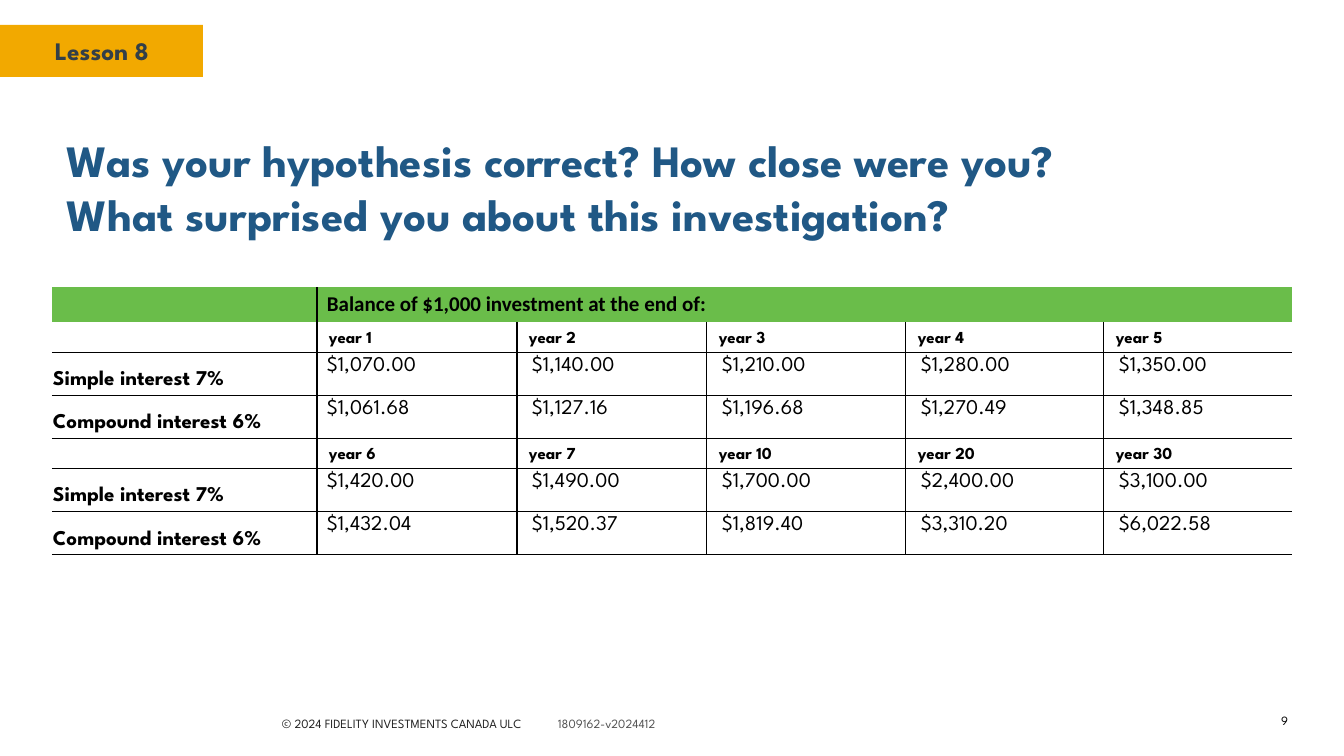
from dataclasses import dataclass

from lxml.etree import SubElement
from pptx import Presentation
from pptx.dml.color import RGBColor as RGB
from pptx.enum.shapes import MSO_SHAPE as SHAPE
from pptx.enum.text import MSO_ANCHOR as ANCHOR, PP_ALIGN as ALIGN
from pptx.oxml.ns import qn
from pptx.util import Emu, Pt


@dataclass(frozen=True)
class Theme:
    """Colours, fonts and type sizes."""
    font: str = "League Spartan"
    head_font: str = "Calibri"
    amber: str = "F2A900"
    slate: str = "333F48"
    blue: str = "205885"
    green: str = "6ABD4A"
    black: str = "000000"
    ink: str = "222222"
    grey: str = "545454"
    title: int = 32
    tag: int = 18
    body: int = 15
    year: int = 12
    small: int = 9


T = Theme()
PLAIN_TABLE = "{2D5ABB26-0587-4C30-8999-92F81FD0307C}"
COLS = (265, 200, 190, 199, 198, 188)
HEAD_H, YEAR_H, VALUE_H = 35, 30, 43
VALUE_SPACING = 0.76
HEADING = "Balance of $1,000 investment at the end of:"
BLOCKS = (
    (("", "year 1", "year 2", "year 3", "year 4", "year 5"),
     ("Simple interest 7%", "$1,070.00", "$1,140.00", "$1,210.00", "$1,280.00", "$1,350.00"),
     ("Compound interest 6%", "$1,061.68", "$1,127.16", "$1,196.68", "$1,270.49", "$1,348.85")),
    (("", "year 6", "year 7", "year 10", "year 20", "year 30"),
     ("Simple interest 7%", "$1,420.00", "$1,490.00", "$1,700.00", "$2,400.00", "$3,100.00"),
     ("Compound interest 6%", "$1,432.04", "$1,520.37", "$1,819.40", "$3,310.20", "$6,022.58")),
)


def px(n):
    """Turn pixels into EMU."""
    return Emu(round(n * 914400 / 100.8))


def add_run(p, text, size, color, bold=False, font=T.font):
    """Add one styled run to a paragraph."""
    r = p.add_run()
    r.text = text
    r.font.name, r.font.size, r.font.bold = font, Pt(size), bold
    r.font.color.rgb = RGB.from_string(color)


def add_box(s, x, y, w, h):
    """Add a wrapping text box and return its text frame."""
    tf = s.shapes.add_textbox(px(x), px(y), px(w), px(h)).text_frame
    tf.word_wrap = True
    return tf


def add_tag(s, x, y, w, h):
    """Draw the lesson tag."""
    sp = s.shapes.add_shape(SHAPE.RECTANGLE, px(x), px(y), px(w), px(h))
    sp.shadow.inherit = False
    sp.fill.solid()
    sp.fill.fore_color.rgb = RGB.from_string(T.amber)
    sp.line.fill.background()
    tf = add_box(s, x + 45, y + 5, w - 71, h - 12)
    add_run(tf.paragraphs[0], "Lesson 8", T.tag, T.slate, True)


def add_title(s, x, y, w, h):
    """Place the two-line question."""
    p = add_box(s, x, y, w, h).paragraphs[0]
    add_run(p, "Was your hypothesis correct? How close were you?", T.title, T.blue, True)
    p.add_line_break()
    add_run(p, "What surprised you about this investigation?", T.title, T.blue, True)


def set_borders(cell, sides):
    """Rule the named sides of a cell and clear the others."""
    tc_pr = cell._tc.get_or_add_tcPr()
    for side in "LRTB":
        ln = SubElement(tc_pr, qn(f"a:ln{side}"), w=str(Pt(1)))
        if side in sides:
            fill = SubElement(ln, qn("a:solidFill"))
            SubElement(fill, qn("a:srgbClr"), val=T.black)
        else:
            SubElement(ln, qn("a:noFill"))


def fill_cell(cell, text, size, insets, anchor, bold=True, font=T.font):
    """Set the insets, anchor and text of a cell."""
    cell.margin_left, cell.margin_top, cell.margin_right, cell.margin_bottom = map(px, insets)
    cell.vertical_anchor = anchor
    p = cell.text_frame.paragraphs[0]
    if text:
        add_run(p, text, size, T.black, bold, font)
    else:
        SubElement(p._p, qn("a:endParaRPr"), sz=str(size * 100))


def add_header(tbl):
    """Fill the green heading row."""
    tbl.cell(0, 1).merge(tbl.cell(0, len(COLS) - 1))
    for i, text in enumerate(("", HEADING)):
        cell = tbl.cell(0, i)
        set_borders(cell, "L" if i else "R")
        fill_cell(cell, text, T.body, (10, 5, 10, 5), ANCHOR.TOP, font=T.head_font)
        cell.fill.solid()
        cell.fill.fore_color.rgb = RGB.from_string(T.green)


def add_balances(s, x, y):
    """Build the table of balances."""
    rows = [row for block in BLOCKS for row in block]
    heights = [HEAD_H] + [YEAR_H, VALUE_H, VALUE_H] * len(BLOCKS)
    tbl = s.shapes.add_table(len(heights), len(COLS), px(x), px(y),
                             px(sum(COLS)), px(sum(heights))).table
    tbl._tbl.tblPr.find(qn("a:tableStyleId")).text = PLAIN_TABLE
    tbl.first_row = tbl.horz_banding = False
    for col, w in zip(tbl.columns, COLS):
        col.width = px(w)
    for row, h in zip(tbl.rows, heights):
        row.height = px(h)
    add_header(tbl)
    for i, row in enumerate(rows, 1):
        is_year = not row[0]
        for j, text in enumerate(row):
            cell = tbl.cell(i, j)
            sides = "B" + "T" * (i > 1) + "L" * (j > 0) + "R" * (j < len(COLS) - 1)
            set_borders(cell, sides)
            is_value = j > 0 and not is_year
            if is_value:
                insets = (10 if j == 1 else 15, 3, 1, 21)
                cell.text_frame.paragraphs[0].line_spacing = VALUE_SPACING
            else:
                insets = (12 if j else 1, 1, 1, 5)
            fill_cell(cell, text, T.year if is_year else T.body, insets,
                      ANCHOR.BOTTOM, not is_value)
            cell.fill.background()


def add_footer(s, x, y, w, h):
    """Place the copyright line and the page number."""
    p = add_box(s, x, y - 1, 433, h).paragraphs[0]
    tabs = SubElement(p._p.get_or_add_pPr(), qn("a:tabLst"))
    SubElement(tabs, qn("a:tab"), pos=str(px(276)), algn="l")
    add_run(p, "© 2024 FIDELITY INVESTMENTS CANADA ULC", T.small, T.ink)
    add_run(p, "\t1809162-v2024412", T.small, T.grey)
    tf = add_box(s, x + w - 71, y, 71, 18)
    tf.vertical_anchor = ANCHOR.MIDDLE
    tf.paragraphs[0].alignment = ALIGN.RIGHT
    add_run(tf.paragraphs[0], "9", T.small, T.black)


def main():
    """Build and save the slide."""
    prs = Presentation()
    prs.slide_width, prs.slide_height = px(1344), px(756)
    s = prs.slides.add_slide(prs.slide_layouts[6])
    add_tag(s, 0, 25, 203, 52)
    add_title(s, 57, 128, 1230, 74)
    add_balances(s, 52, 287)
    add_footer(s, 272, 712, 1026, 25)
    prs.save("out.pptx")


if __name__ == "__main__":
    main()
